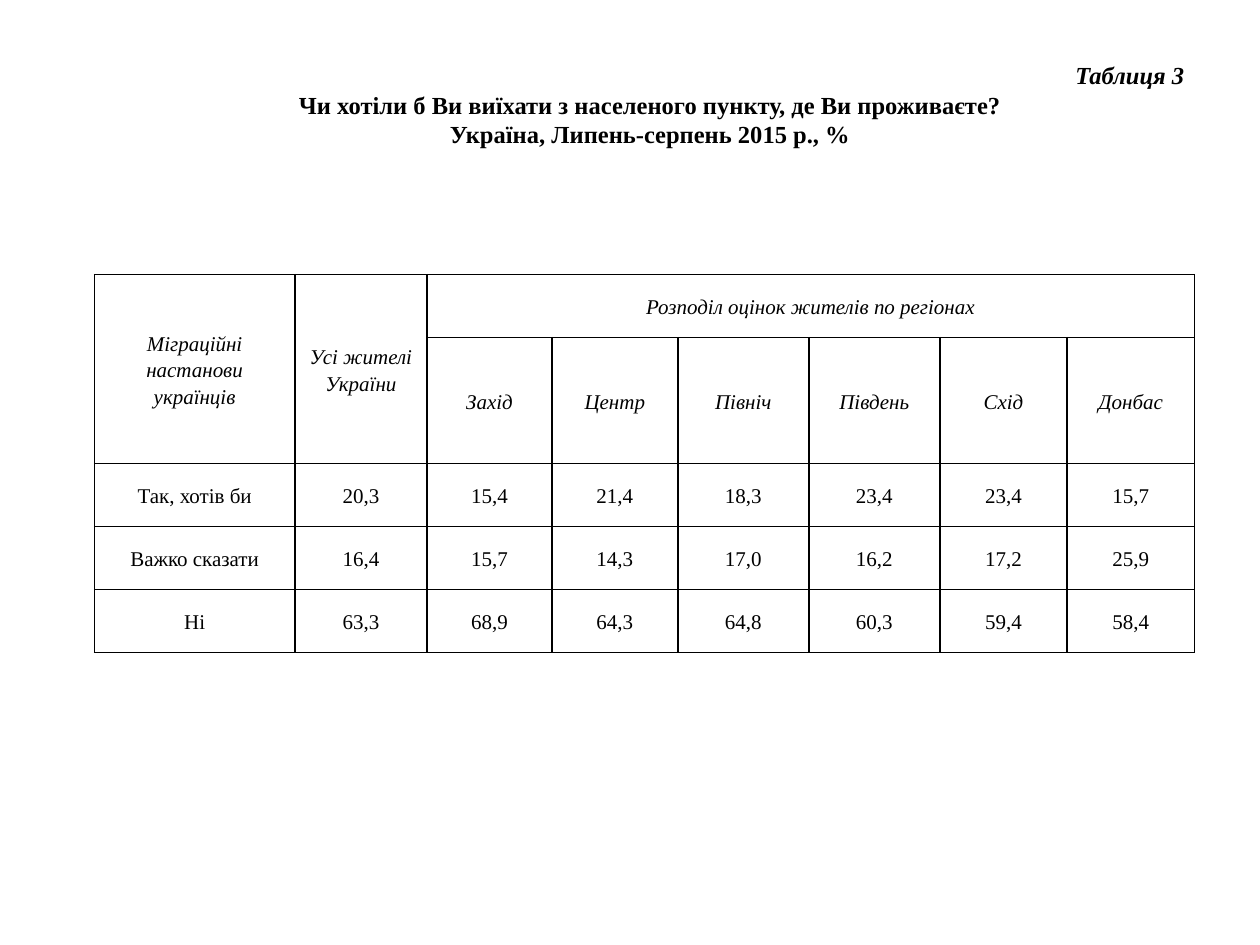
from lxml.etree import SubElement as Sub
from pptx import Presentation
from pptx.dml.color import RGBColor
from pptx.enum.text import MSO_ANCHOR as Anchor, MSO_AUTO_SIZE as Auto, PP_ALIGN as Align
from pptx.oxml.ns import qn
from pptx.util import Inches, Pt

BLACK = RGBColor(0, 0, 0)
FACE = "Times New Roman"
TITLE = [
    ("Таблиця 3", Align.RIGHT, True),
    ("Чи хотіли б Ви виїхати з населеного пункту, де Ви проживаєте?", Align.CENTER, False),
    ("Україна, Липень-серпень 2015 р., %", Align.CENTER, False),
]
ROWS = [
    ["Міграційні настанови українців", "Усі жителі України",
     "Розподіл оцінок жителів по регіонах"] + [""] * 5,
    ["", "", "Захід", "Центр", "Північ", "Південь", "Схід", "Донбас"],
    ["Так, хотів би", "20,3", "15,4", "21,4", "18,3", "23,4", "23,4", "15,7"],
    ["Важко сказати", "16,4", "15,7", "14,3", "17,0", "16,2", "17,2", "25,9"],
    ["Ні", "63,3", "68,9", "64,3", "64,8", "60,3", "59,4", "58,4"],
]
SPANS = [((0, 0), (1, 0)), ((0, 1), (1, 1)), ((0, 2), (0, 7))]
HEADS = 2
WIDTHS = [1.59, 1.05, 0.99, 1, 1.04, 1.04, 1.01, 1.01]
HEIGHTS = [0.5, 1, 0.5, 0.5, 0.5]


def style(para, size, align, bold, italic):
    para.alignment = align
    font = para.font
    font.name, font.size = FACE, Pt(size)
    font.bold, font.italic = bold, italic
    font.color.rgb = BLACK


def border(cell):
    props = cell._tc.get_or_add_tcPr()
    for side in ("lnL", "lnR", "lnT", "lnB"):
        line = Sub(props, qn("a:" + side), w=str(Pt(1)))
        Sub(Sub(line, qn("a:solidFill")), qn("a:srgbClr"), val=str(BLACK))


def add_title(slide):
    title = slide.shapes.title
    title.left, title.top, title.width, title.height = map(Inches, (0.52, 0.43, 8.98, 1.04))
    frame = title.text_frame
    frame.text = "\n".join(text for text, _, _ in TITLE)
    frame.word_wrap = True
    frame.auto_size = Auto.NONE
    frame.vertical_anchor = Anchor.TOP
    for para, (_, align, italic) in zip(frame.paragraphs, TITLE):
        style(para, 14, align, True, italic)
        para._p.get_or_add_pPr().set("indent", str(Inches(0.3)))


def add_grid(slide):
    table = slide.shapes.add_table(
        len(ROWS), len(WIDTHS), Inches(0.75), Inches(2.18),
        Inches(sum(WIDTHS)), Inches(sum(HEIGHTS))).table
    table.first_row = table.horz_banding = False
    for col, width in zip(table.columns, WIDTHS):
        col.width = Inches(width)
    for row, height in zip(table.rows, HEIGHTS):
        row.height = Inches(height)
    for r, row in enumerate(ROWS):
        for c, text in enumerate(row):
            cell = table.cell(r, c)
            cell.text = text
            cell.vertical_anchor = Anchor.MIDDLE
            cell.margin_left = cell.margin_right = Inches(0.07)
            cell.margin_top = cell.margin_bottom = 0
            border(cell)
            cell.fill.background()
            para = cell.text_frame.paragraphs[0]
            style(para, 12, Align.CENTER, False, r < HEADS)
            para.line_spacing = 1.15
    for start, end in SPANS:
        table.cell(*start).merge(table.cell(*end))


def main():
    deck = Presentation()
    deck.slide_width, deck.slide_height = Inches(10), Inches(7.5)
    slide = deck.slides.add_slide(deck.slide_layouts[5])
    add_grid(slide)
    add_title(slide)
    deck.save("out.pptx")


if __name__ == "__main__":
    main()
